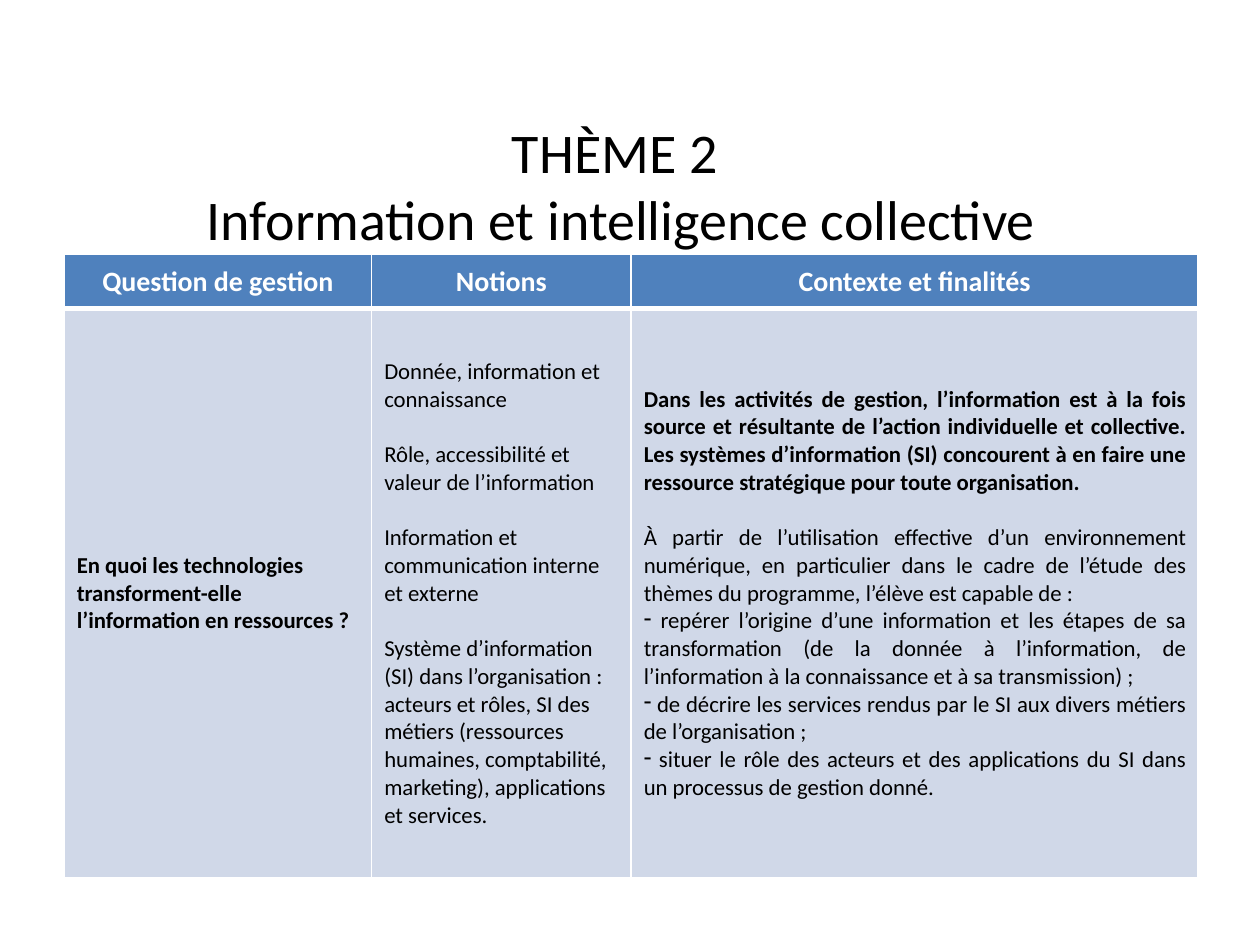
from lxml import etree
from pptx import Presentation
from pptx.dml.color import RGBColor
from pptx.enum.text import MSO_ANCHOR, MSO_AUTO_SIZE, PP_ALIGN
from pptx.oxml.ns import qn
from pptx.util import Inches, Pt

MID = MSO_ANCHOR.MIDDLE
LEFT, CENTER, JUST = PP_ALIGN.LEFT, PP_ALIGN.CENTER, PP_ALIGN.JUSTIFY
FIXED = MSO_AUTO_SIZE.NONE

TITLE = ("THÈME 2 ", "Information et intelligence collective")
HEADS = ("Question de gestion", "Notions", "Contexte et finalités")
QUERY = "En quoi les technologies transforment-elle l’information en ressources ?"
NOTIONS = (
    "Donnée, information et connaissance",
    "Rôle, accessibilité et valeur de l’information",
    "Information et communication interne et externe",
    "Système d’information (SI) dans l’organisation : acteurs et rôles, SI des "
    "métiers (ressources humaines, comptabilité, marketing), applications et services.",
)
CONTEXT = (
    "Dans les activités de gestion, l’information est à la fois source et résultante "
    "de l’action individuelle et collective. Les systèmes d’information (SI) concourent "
    "à en faire une ressource stratégique pour toute organisation."
)
INTRO = (
    "À partir de l’utilisation effective d’un environnement numérique, en particulier "
    "dans le cadre de l’étude des thèmes du programme, l’élève est capable de :"
)
SKILLS = (
    " repérer l’origine d’une information et les étapes de sa transformation (de la "
    "donnée à l’information, de l’information à la connaissance et à sa transmission) ;",
    " de décrire les services rendus par le SI aux divers métiers de l’organisation ;",
    " situer le rôle des acteurs et des applications du SI dans un processus de gestion donné.",
)
COLS, ROWS = (2.44, 2.06, 4.5), (0.43, 4.52)
GAP = 15.85
HEAD = {"size": Pt(16), "bold": True, "color": "FFFFFF"}
BODY = {"size": Pt(13), "bold": False, "color": "000000"}
BOLD = {**BODY, "bold": True}


def rgb(code):
    """Turn a hex string into a colour."""
    return RGBColor.from_string(code)


def style(font, form):
    """Apply a dict of format values to a font."""
    font.name = "Calibri"
    for key, val in form.items():
        if key == "color":
            font.color.rgb = rgb(val)
        else:
            setattr(font, key, val)


def dash(para):
    """Give a paragraph a dash bullet without indent."""
    props = para._p.get_or_add_pPr()
    props.set("marL", "0")
    props.set("indent", "0")
    etree.SubElement(props, qn("a:buChar")).set("char", "-")


def edge(cell, widths):
    """Draw white borders, given left, right, top and bottom points."""
    props = cell._tc.get_or_add_tcPr()
    for spot, (side, width) in enumerate(zip("LRTB", widths)):
        line = etree.Element(qn(f"a:ln{side}"), w=str(Pt(width)))
        fill = etree.SubElement(line, qn("a:solidFill"))
        etree.SubElement(fill, qn("a:srgbClr")).set("val", "FFFFFF")
        props.insert(spot, line)


def write(cell, items, align, fill, widths):
    """Fill a cell with (text, format, gap after, bullet) items."""
    cell.vertical_anchor = MID
    cell.fill.solid()
    cell.fill.fore_color.rgb = rgb(fill)
    edge(cell, widths)
    frame = cell.text_frame
    for num, (text, form, gap, bullet) in enumerate(items):
        para = frame.add_paragraph() if num else frame.paragraphs[0]
        para.alignment = align
        para.space_after = Pt(gap)
        if bullet:
            dash(para)
        run = para.add_run()
        run.text = text
        style(run.font, form)


def main():
    """Build the slide and save it."""
    deck = Presentation()
    deck.slide_width, deck.slide_height = Inches(10), Inches(7.5)
    slide = deck.slides.add_slide(deck.slide_layouts[5])

    title = slide.shapes.title
    place = {"left": 0.43, "top": 0.99, "width": 9, "height": 0.95}
    for key, val in place.items():
        setattr(title, key, Inches(val))
    frame = title.text_frame
    frame.auto_size, frame.vertical_anchor = FIXED, MID
    para = frame.paragraphs[0]
    para.alignment = CENTER
    for num, text in enumerate(TITLE):
        if num:
            para.add_line_break()
        run = para.add_run()
        run.text = text
        style(run.font, {"size": Pt(32), "color": "000000"})

    area = [Inches(n) for n in (0.51, 2.02, sum(COLS), sum(ROWS))]
    table = slide.shapes.add_table(len(ROWS), len(COLS), *area).table
    for col, width in zip(table.columns, COLS):
        col.width = Inches(width)
    for row, height in zip(table.rows, ROWS):
        row.height = Inches(height)

    last = len(NOTIONS) - 1
    notions = [(t, BODY, GAP if n < last else 0, False) for n, t in enumerate(NOTIONS)]
    context = [(CONTEXT, BOLD, GAP, False), (INTRO, BODY, 0, False)]
    context += [(t, BODY, 0, True) for t in SKILLS]
    bodies = (([(QUERY, BOLD, 0, False)], LEFT), (notions, LEFT), (context, JUST))
    for num, (head, (items, align)) in enumerate(zip(HEADS, bodies)):
        write(table.cell(0, num), [(head, HEAD, 0, False)], CENTER, "4F81BD", (1, 1, 1, 3))
        write(table.cell(1, num), items, align, "D0D8E8", (1, 1, 3, 1))
    deck.save("out.pptx")


if __name__ == "__main__":
    main()
